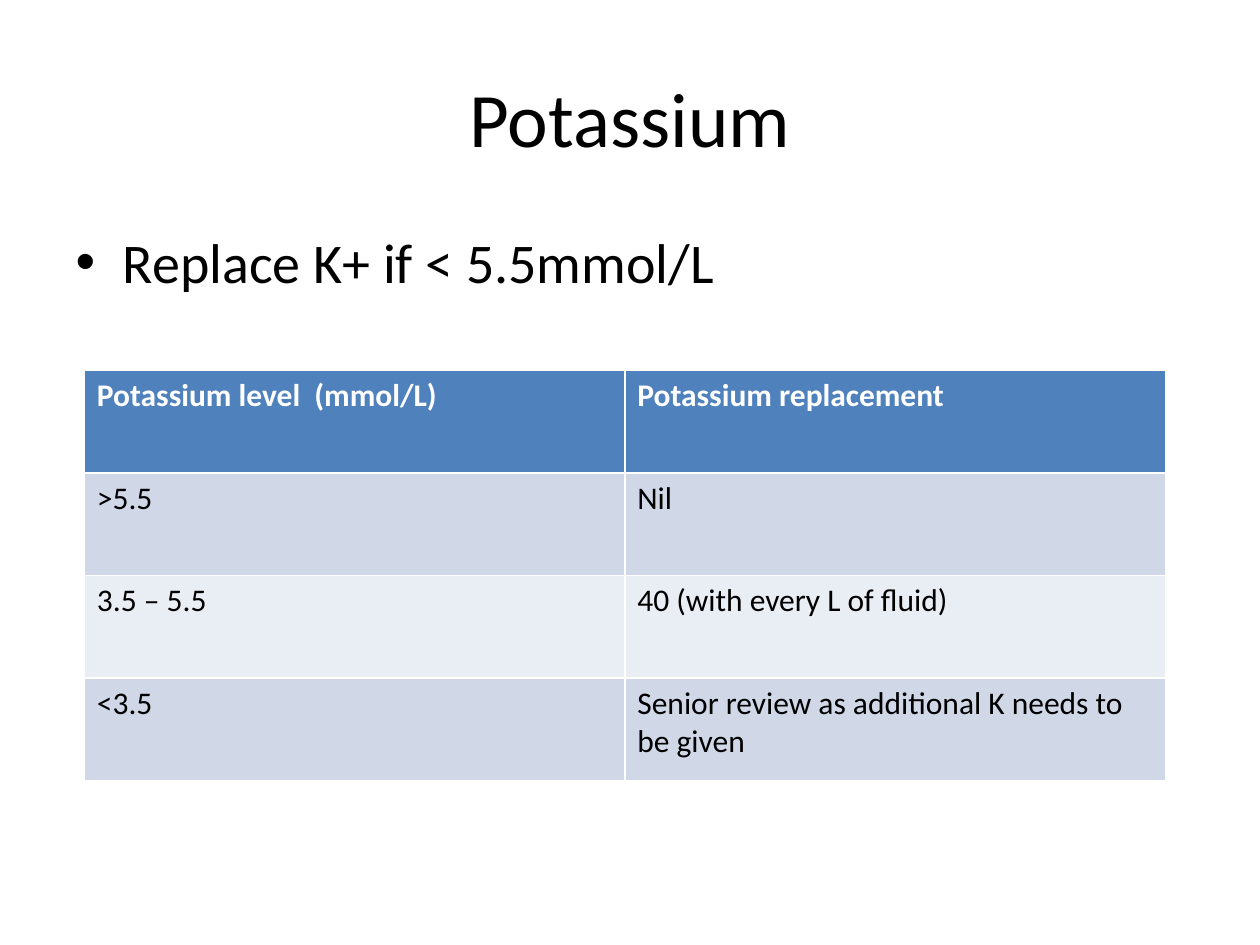
from dataclasses import dataclass

from pptx import Presentation
from pptx.dml.color import RGBColor
from pptx.enum.text import MSO_ANCHOR, PP_ALIGN
from pptx.util import Cm, Pt

TITLE = "Potassium"
ADVICE = "Replace K+ if < 5.5mmol/L"
REPLACEMENT_ROWS = [
    ("Potassium level  (mmol/L)", "Potassium replacement"),
    (">5.5", "Nil"),
    ("3.5 – 5.5", "40 (with every L of fluid)"),
    ("<3.5", "Senior review as additional K needs to be given"),
]

TITLE_BOX = (Cm(1.27), Cm(0.76), Cm(22.86), Cm(3.18))
BODY_BOX = (Cm(1.27), Cm(4.45), Cm(22.86), Cm(12.57))
TABLE_BOX = (Cm(1.7), Cm(7.47), Cm(21.79), Cm(8.26))


@dataclass(frozen=True)
class Theme:
    font: str = "Calibri"
    title_size: int = 44
    body_size: int = 32
    table_size: int = 18
    ink: str = "000000"
    header_ink: str = "FFFFFF"
    header_fill: str = "4F81BD"
    band_fills: tuple = ("D0D8E8", "E9EDF4")


THEME = Theme()


def write(text_frame, text, size, color=THEME.ink, bold=False):
    paragraph = text_frame.paragraphs[0]
    run = paragraph.add_run()
    run.text = text
    formats = {"name": THEME.font, "size": Pt(size), "bold": bold}
    for name, value in formats.items():
        setattr(run.font, name, value)
    run.font.color.rgb = RGBColor.from_string(color)
    return paragraph


def place(shape, box):
    for name, value in zip(("left", "top", "width", "height"), box):
        setattr(shape, name, value)


def add_replacement_table(slide):
    row_count, column_count = len(REPLACEMENT_ROWS), len(REPLACEMENT_ROWS[0])
    table = slide.shapes.add_table(row_count, column_count, *TABLE_BOX).table
    for row_index, row in enumerate(REPLACEMENT_ROWS):
        header = row_index == 0
        fill = THEME.header_fill if header else THEME.band_fills[(row_index - 1) % 2]
        color = THEME.header_ink if header else THEME.ink
        for column_index, text in enumerate(row):
            cell = table.cell(row_index, column_index)
            cell.fill.solid()
            cell.fill.fore_color.rgb = RGBColor.from_string(fill)
            write(cell.text_frame, text, THEME.table_size, color, header)


def main():
    presentation = Presentation()
    presentation.slide_width, presentation.slide_height = Cm(25.4), Cm(19.05)
    slide = presentation.slides.add_slide(presentation.slide_layouts[1])

    title, body = slide.shapes.title, slide.placeholders[1]
    place(title, TITLE_BOX)
    title.text_frame.vertical_anchor = MSO_ANCHOR.MIDDLE
    write(title.text_frame, TITLE, THEME.title_size).alignment = PP_ALIGN.CENTER

    place(body, BODY_BOX)
    write(body.text_frame, ADVICE, THEME.body_size)

    add_replacement_table(slide)
    presentation.save("out.pptx")


if __name__ == "__main__":
    main()
